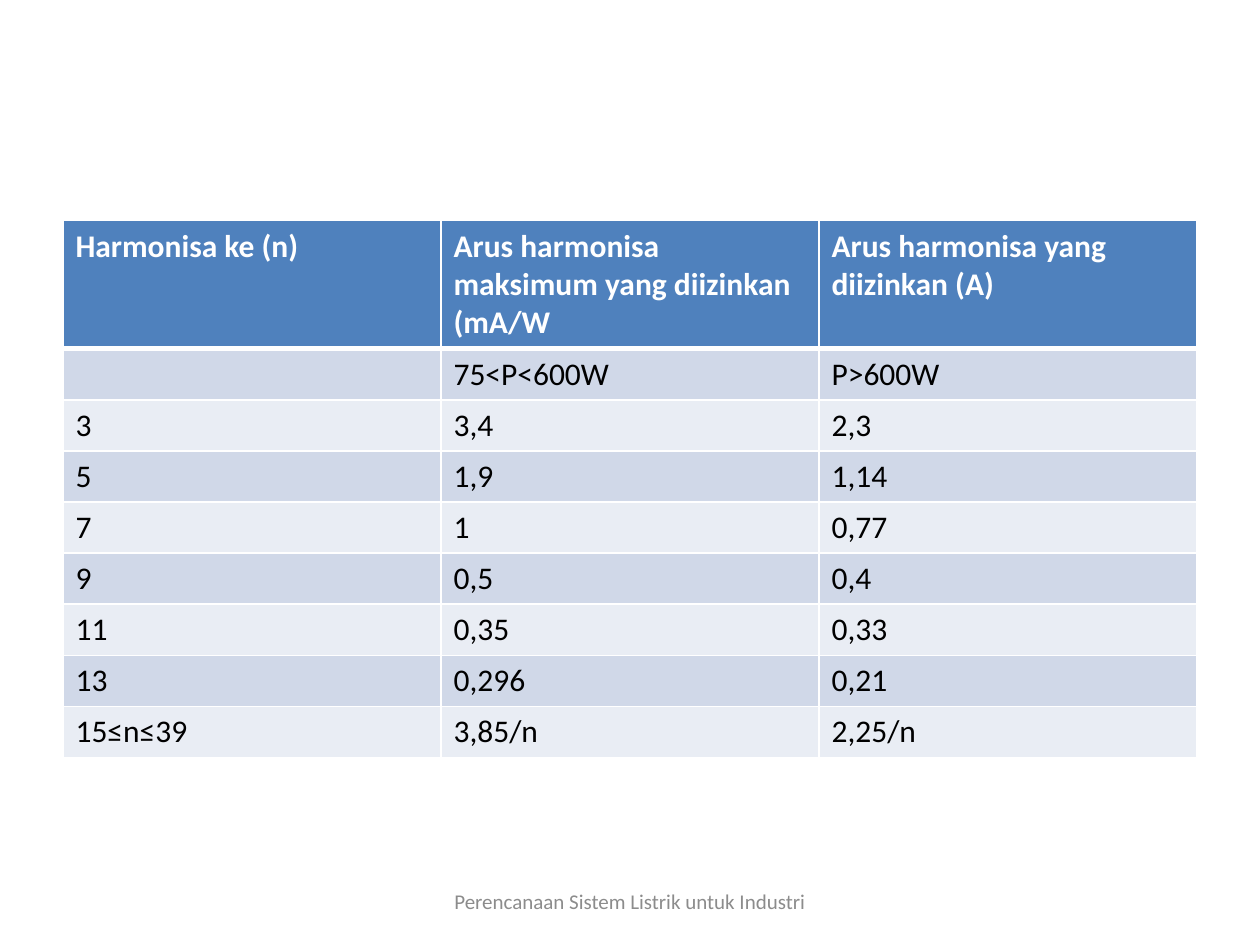
from lxml import etree
from pptx import Presentation
from pptx.dml.color import RGBColor
from pptx.enum.text import MSO_ANCHOR, PP_ALIGN
from pptx.oxml.ns import qn
from pptx.util import Cm, Pt

CENTER = PP_ALIGN.CENTER
MIDDLE = MSO_ANCHOR.MIDDLE
BLANK_LAYOUT = 6
FONT = "Calibri"
COLORS = {
    "header": "4F81BD",
    "band_dark": "D0D8E8",
    "band_light": "E9EDF4",
    "white": "FFFFFF",
    "text": "000000",
    "footer": "8C8C8C",
}
ROWS = [
    ("Harmonisa ke (n)", "Arus harmonisa maksimum yang diizinkan (mA/W",
     "Arus harmonisa yang diizinkan (A)"),
    ("", "75<P<600W", "P>600W"),
    ("3", "3,4", "2,3"),
    ("5", "1,9", "1,14"),
    ("7", "1", "0,77"),
    ("9", "0,5", "0,4"),
    ("11", "0,35", "0,33"),
    ("13", "0,296", "0,21"),
    ("15≤n≤39", "3,85/n", "2,25/n"),
]


def add_run(paragraph, text, size, color, bold=False):
    run = paragraph.add_run()
    run.text = text
    run.font.name = FONT
    run.font.size = Pt(size)
    run.font.bold = bold
    run.font.color.rgb = RGBColor.from_string(COLORS[color])


def add_border(cell, side, width):
    properties = cell._tc.get_or_add_tcPr()
    line = etree.SubElement(properties, qn(f"a:ln{side}"), w=str(Pt(width)))
    fill = etree.SubElement(line, qn("a:solidFill"))
    etree.SubElement(fill, qn("a:srgbClr"), val=COLORS["white"])


presentation = Presentation()
presentation.slide_width = Cm(25.4)
presentation.slide_height = Cm(19.05)
slide = presentation.slides.add_slide(presentation.slide_layouts[BLANK_LAYOUT])

# Harmonic limits table
header_height, row_height = Cm(2.54), Cm(1.03)
table_height = header_height + row_height * (len(ROWS) - 1)
table = slide.shapes.add_table(
    len(ROWS), 3, Cm(1.27), Cm(4.45), Cm(22.86), table_height).table
for column in table.columns:
    column.width = Cm(7.62)

for row_index, values in enumerate(ROWS):
    is_header = row_index == 0
    table.rows[row_index].height = header_height if is_header else row_height
    if is_header:
        fill_color = "header"
    else:
        fill_color = "band_dark" if row_index % 2 else "band_light"

    for column_index, value in enumerate(values):
        cell = table.cell(row_index, column_index)
        # The rule under the header is thicker than the others
        for side in "LRTB":
            under_header = (row_index, side) in ((0, "B"), (1, "T"))
            add_border(cell, side, 3 if under_header else 1)
        cell.fill.solid()
        cell.fill.fore_color.rgb = RGBColor.from_string(COLORS[fill_color])
        if value:
            add_run(cell.text_frame.paragraphs[0], value, 18,
                    "white" if is_header else "text", is_header)

# Footer
footer = slide.shapes.add_textbox(Cm(8.68), Cm(17.66), Cm(8.04), Cm(1.01))
footer.text_frame.word_wrap = True
footer.text_frame.vertical_anchor = MIDDLE
paragraph = footer.text_frame.paragraphs[0]
paragraph.alignment = CENTER
add_run(paragraph, "Perencanaan Sistem Listrik untuk Industri", 12, "footer")

presentation.save("out.pptx")
